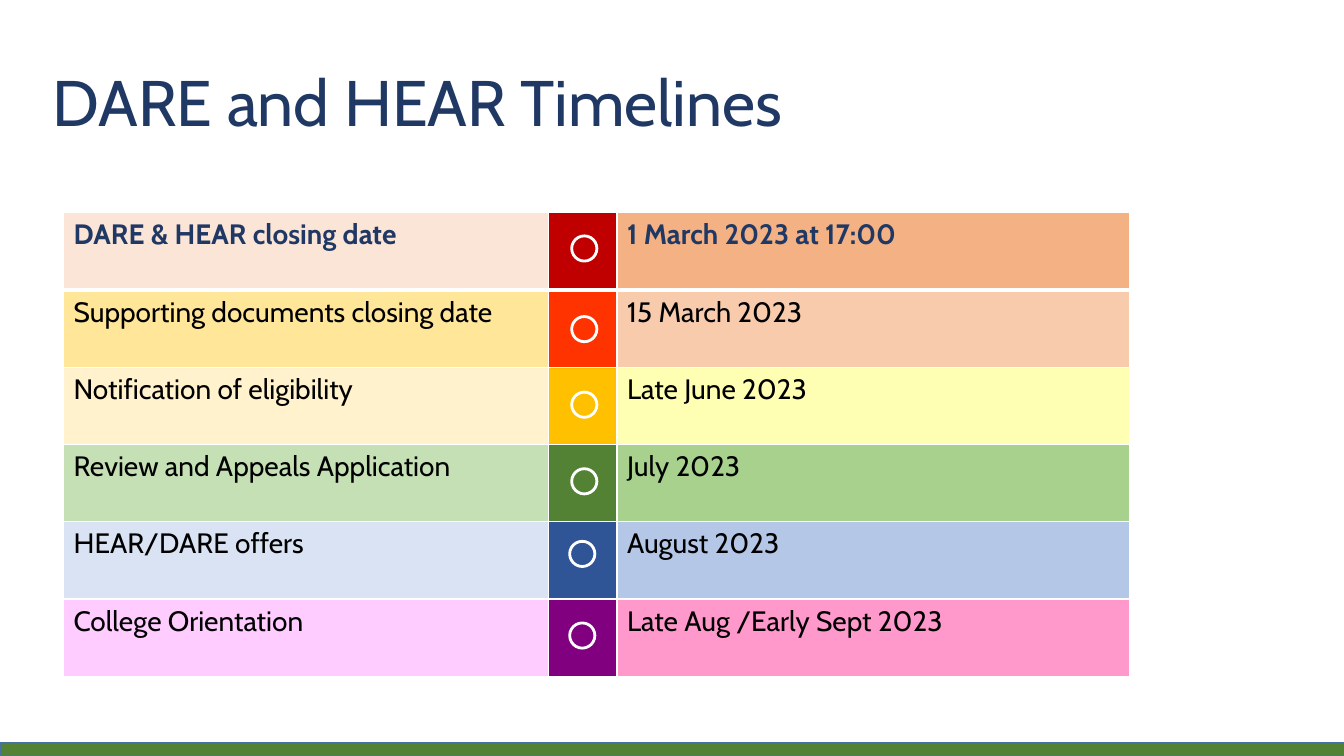
from lxml import etree
from pptx import Presentation
from pptx import util as u
from pptx.dml.color import RGBColor
from pptx.enum import shapes, text
from pptx.oxml import ns

PX = 9144  # EMU per px, 100 px to the inch
FONT = "Cabin"
NAVY = RGBColor(0x20, 0x38, 0x64)
BLACK = RGBColor(0, 0, 0)
WHITE = RGBColor(0xFF, 0xFF, 0xFF)
GREEN = RGBColor(0x54, 0x82, 0x35)
STEEL = RGBColor(0x43, 0x73, 0x9E)
PALE_YELLOW = RGBColor(0xFF, 0xFF, 0x99)

TABLE_LEFT, TABLE_TOP, TABLE_HEIGHT = 63, 211, 460
COLUMN_WIDTHS = (481, 68, 508)
CIRCLE = 25

# event, date, colours of the three cells, left and top of the circle
TIMELINE = [
    ("DARE & HEAR closing date", "1 March 2023 at 17:00",
     (RGBColor(0xFB, 0xE5, 0xD6), RGBColor(0xC0, 0, 0), RGBColor(0xF4, 0xB1, 0x83)), (567, 234)),
    ("Supporting documents closing date", "15 March 2023",
     (RGBColor(0xFF, 0xE6, 0x99), RGBColor(0xFF, 0x33, 0), RGBColor(0xF8, 0xCB, 0xAD)), (567, 314)),
    ("Notification of eligibility", "Late June 2023",
     (RGBColor(0xFF, 0xF2, 0xCC), RGBColor(0xFF, 0xC0, 0), PALE_YELLOW), (567, 389)),
    ("Review and Appeals Application", "July 2023",
     (RGBColor(0xC5, 0xE0, 0xB4), GREEN, RGBColor(0xA9, 0xD1, 0x8E)), (567, 465)),
    ("HEAR/DARE offers", "August 2023",
     (RGBColor(0xDA, 0xE3, 0xF3), RGBColor(0x2F, 0x55, 0x97), RGBColor(0xB4, 0xC7, 0xE7)), (565, 537)),
    ("College Orientation", "Late Aug /Early Sept 2023",
     (RGBColor(0xFF, 0xCC, 0xFF), RGBColor(0x80, 0, 0x80), RGBColor(0xFF, 0x99, 0xCC)), (565, 618)),
]


def write(frame, wording, size=20, color=BLACK, bold=False, line_spacing=None, space_before=None):
    paragraph = frame.paragraphs[0]
    paragraph.alignment = text.PP_ALIGN.LEFT
    paragraph.line_spacing = line_spacing
    if space_before is not None:
        paragraph.space_before = u.Pt(space_before)
    run = paragraph.add_run()
    run.text = wording
    run.font.name = FONT
    run.font.size = u.Pt(size)
    run.font.bold = bold
    run.font.color.rgb = color


def add_title(slide, wording):
    title = slide.shapes.title
    title.left, title.top, title.width, title.height = (v * PX for v in (42, 18, 772, 110))
    frame = title.text_frame
    frame.word_wrap = False
    frame.auto_size = text.MSO_AUTO_SIZE.SHAPE_TO_FIT_TEXT
    frame.vertical_anchor = text.MSO_ANCHOR.TOP
    write(frame, wording, size=46, color=NAVY, line_spacing=1.5, space_before=12)


def fill_cell(cell, color):
    cell.fill.solid()
    cell.fill.fore_color.rgb = color
    if color == PALE_YELLOW:
        rgb = cell._tc.tcPr.find(".//" + ns.qn("a:srgbClr"))
        etree.SubElement(rgb, ns.qn("a:alpha"), val="74000")


def border_cell(cell, bottom=1):
    """Draw white borders; the widths are in points."""
    widths = {"a:lnL": 1, "a:lnR": 1, "a:lnT": 1, "a:lnB": bottom}
    for place, (side, width) in enumerate(widths.items()):
        line = etree.Element(ns.qn(side), w=str(u.Pt(width)))
        fill = etree.SubElement(line, ns.qn("a:solidFill"))
        etree.SubElement(fill, ns.qn("a:srgbClr"), val=str(WHITE))
        cell._tc.tcPr.insert(place, line)


def add_timeline(slide):
    table = slide.shapes.add_table(
        len(TIMELINE), len(COLUMN_WIDTHS), TABLE_LEFT * PX, TABLE_TOP * PX,
        sum(COLUMN_WIDTHS) * PX, TABLE_HEIGHT * PX).table
    table.horz_banding = False
    for column, width in zip(table.columns, COLUMN_WIDTHS):
        column.width = width * PX
    for index, (event, date, colors, _) in enumerate(TIMELINE):
        first = index == 0
        for cell, wording, color in zip(table.rows[index].cells, (event, "", date), colors):
            fill_cell(cell, color)
            border_cell(cell, bottom=3 if first else 1)
            if wording:
                write(cell.text_frame, wording, color=NAVY if first else BLACK, bold=first)


def add_figure(slide, kind, left, top, width, height, line, line_width, fill=None):
    figure = slide.shapes.add_shape(kind, left * PX, top * PX, width * PX, height * PX)
    figure.shadow.inherit = False
    if fill is None:
        figure.fill.background()
    else:
        figure.fill.solid()
        figure.fill.fore_color.rgb = fill
    figure.line.color.rgb = line
    figure.line.width = u.Pt(line_width)


def main():
    deck = Presentation()
    deck.slide_width, deck.slide_height = 1333 * PX, 750 * PX
    slide = deck.slides.add_slide(deck.slide_layouts.get_by_name("Title Only"))
    add_title(slide, "DARE and HEAR Timelines")
    add_timeline(slide)
    for *_, (left, top) in TIMELINE:
        add_figure(slide, shapes.MSO_SHAPE.OVAL, left, top, CIRCLE, CIRCLE, WHITE, 2)
    add_figure(slide, shapes.MSO_SHAPE.RECTANGLE, 0, 737, 1333, 13, STEEL, 1, fill=GREEN)
    deck.save("out.pptx")


if __name__ == "__main__":
    main()
